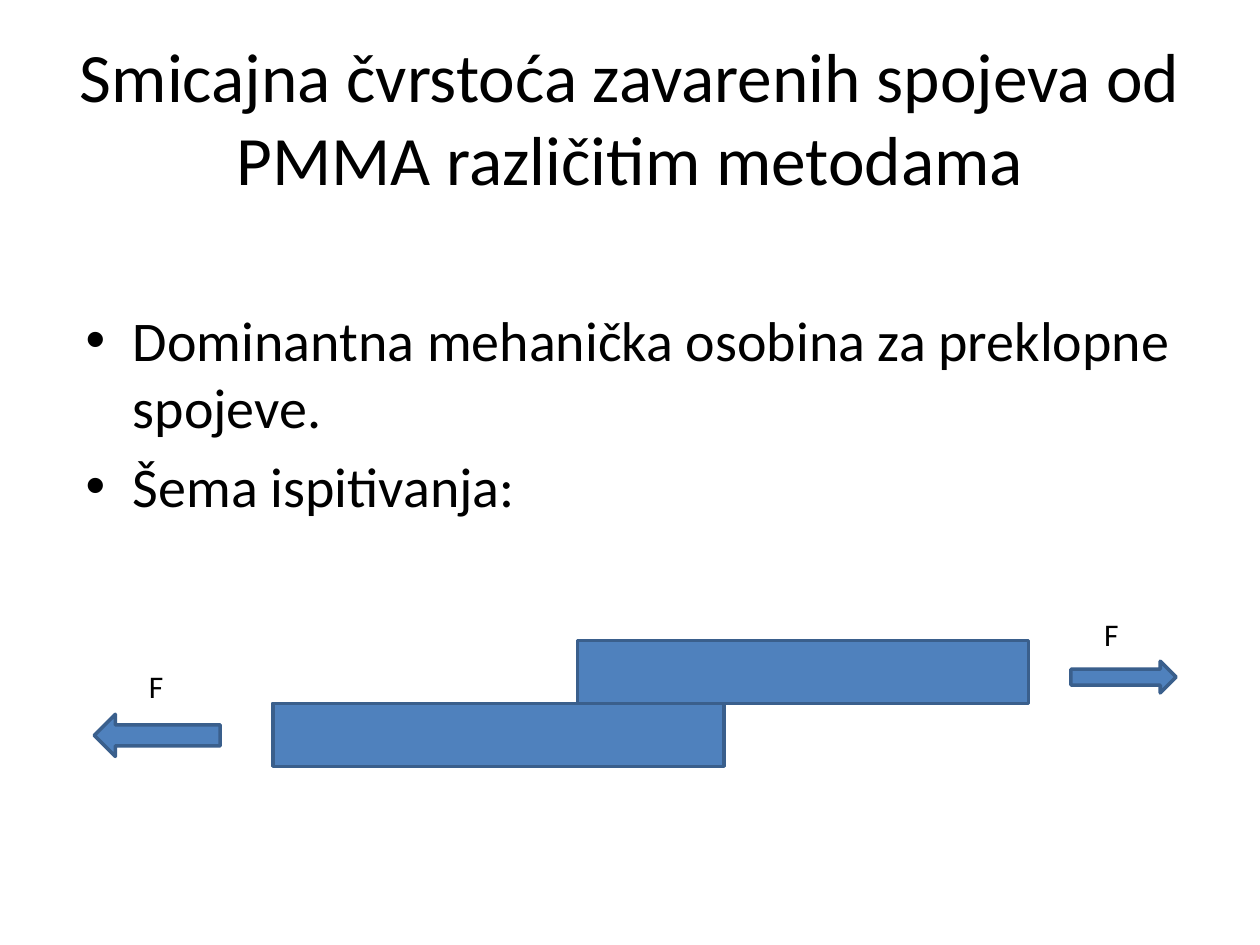
import pptx
import pptx.util
import pptx.dml.color
import pptx.enum.shapes
import pptx.enum.text

Cm, Pt = pptx.util.Cm, pptx.util.Pt
SHAPE = pptx.enum.shapes.MSO_SHAPE
ALIGN = pptx.enum.text.PP_ALIGN
ANCHOR = pptx.enum.text.MSO_ANCHOR
AUTO = pptx.enum.text.MSO_AUTO_SIZE

BLACK = pptx.dml.color.RGBColor(0x00, 0x00, 0x00)
BLUE = pptx.dml.color.RGBColor(0x4F, 0x81, 0xBD)
DARK_BLUE = pptx.dml.color.RGBColor(0x3A, 0x5F, 0x8C)

PLATE_W, PLATE_H = 9.1, 1.27
LOWER_X, LOWER_Y = 5.5, 14.18
UPPER_X, UPPER_Y = 11.64, LOWER_Y - PLATE_H


def set_attrs(obj, values):
    for name, value in values.items():
        setattr(obj, name, value)


def place(sp, left, top, width, height):
    set_attrs(sp, {"left": Cm(left), "top": Cm(top),
                   "width": Cm(width), "height": Cm(height)})


def write(tf, lines, size, frame=None, para=None):
    set_attrs(tf, {"word_wrap": True, "auto_size": AUTO.NONE, **(frame or {})})
    for i, line in enumerate(lines):
        p = tf.paragraphs[0] if i == 0 else tf.add_paragraph()
        set_attrs(p, para or {})
        r = p.add_run()
        r.text = line
        set_attrs(r.font, {"name": "Calibri", "size": Pt(size)})
        r.font.color.rgb = BLACK


def add_block(shapes, kind, left, top, width, height):
    sp = shapes.add_shape(kind, Cm(left), Cm(top), Cm(width), Cm(height))
    sp.shadow.inherit = False
    sp.fill.solid()
    sp.fill.fore_color.rgb = BLUE
    sp.line.color.rgb = DARK_BLUE
    sp.line.width = Pt(2)


def add_force_label(shapes, left, top):
    sp = shapes.add_textbox(Cm(left), Cm(top), Cm(1.06), Cm(1.02))
    write(sp.text_frame, ["F"], 18, {"auto_size": AUTO.SHAPE_TO_FIT_TEXT})


def add_test_scheme(s):
    shapes = s.shapes.add_group_shape().shapes
    # Overlapping plates
    for left, top in ((UPPER_X, UPPER_Y), (LOWER_X, LOWER_Y)):
        add_block(shapes, SHAPE.RECTANGLE, left, top, PLATE_W, PLATE_H)
    # Forces pulling the plates apart
    add_block(shapes, SHAPE.LEFT_ARROW, 1.9, 14.4, 2.54, 0.85)
    add_block(shapes, SHAPE.RIGHT_ARROW, 21.59, 13.33, 2.12, 0.64)
    add_force_label(shapes, 2.75, 13.33)
    add_force_label(shapes, 22.01, 12.28)


def main():
    prs = pptx.Presentation()
    set_attrs(prs, {"slide_width": Cm(25.4), "slide_height": Cm(19.05)})
    s = prs.slides.add_slide(prs.slide_layouts[1])

    # Title
    title = s.shapes.title
    place(title, 1.27, 0.76, 22.86, 3.18)
    write(title.text_frame,
          ["Smicajna čvrstoća zavarenih spojeva od PMMA različitim metodama"],
          39.6, {"vertical_anchor": ANCHOR.MIDDLE}, {"alignment": ALIGN.CENTER})

    # Bulleted list, set one line below the top of its box
    body = s.placeholders[1]
    place(body, 1.47, 4.45, 22.86, 12.57)
    write(body.text_frame,
          ["Dominantna mehanička osobina za preklopne spojeve.",
           "Šema ispitivanja:"],
          32, {"margin_top": Cm(1.71)}, {"space_before": Pt(6.4)})

    # Lap joint test
    add_test_scheme(s)
    prs.save("out.pptx")


if __name__ == "__main__":
    main()
